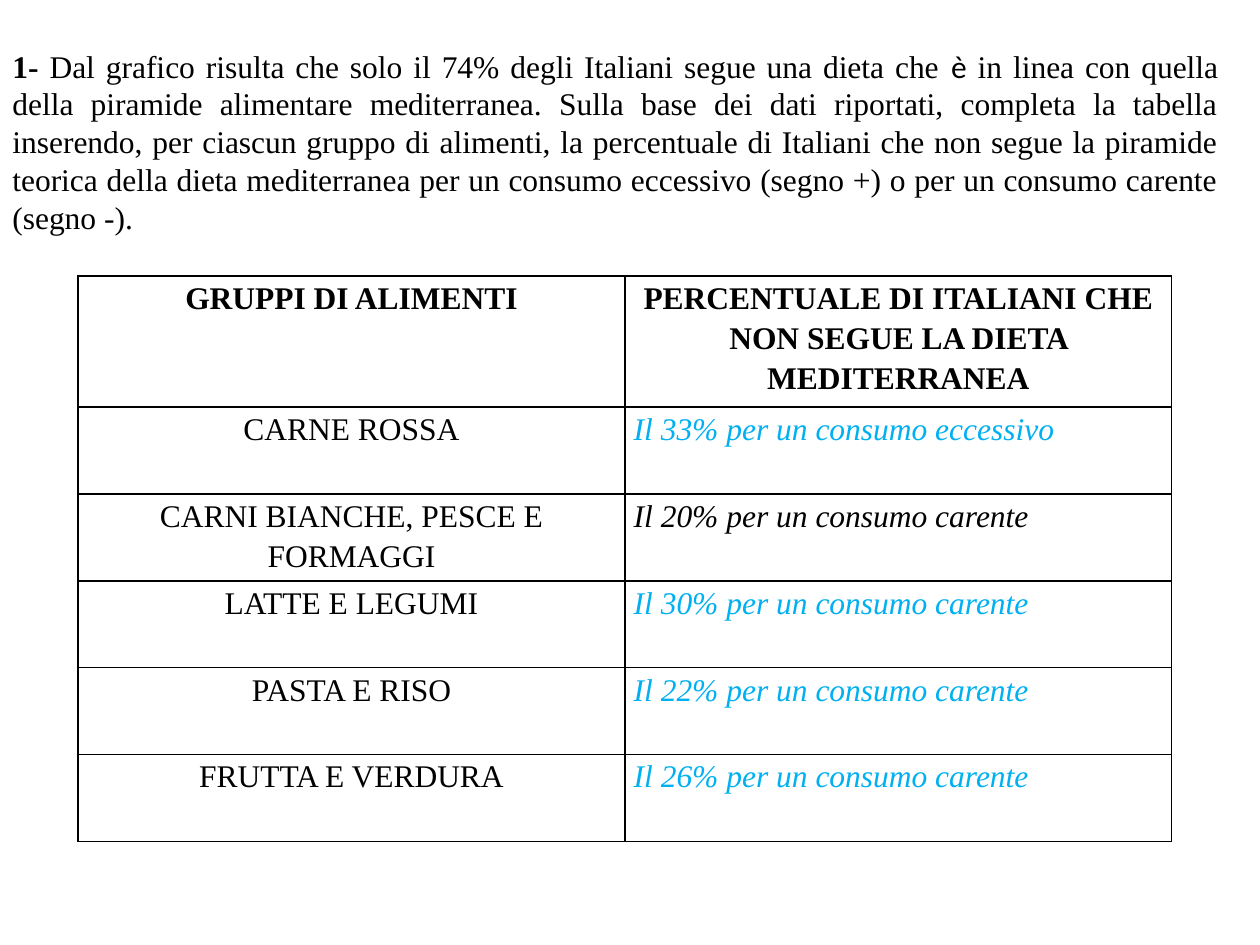
from lxml.etree import SubElement
from pptx import Presentation
from pptx.dml.color import RGBColor
from pptx.enum.text import MSO_ANCHOR, PP_ALIGN
from pptx.oxml.ns import qn
from pptx.util import Inches, Pt

COLORS = {"text": "000000", "answer": "00B0F0", "cell": "FFFFFF", "border": "000000"}
FONT = "Times New Roman"


def set_borders(cell):
    properties = cell._tc.get_or_add_tcPr()
    for position, side in enumerate(("lnL", "lnR", "lnT", "lnB")):
        line = SubElement(properties, qn(f"a:{side}"), w=str(Pt(1)))
        fill = SubElement(line, qn("a:solidFill"))
        SubElement(fill, qn("a:srgbClr"), val=COLORS["border"])
        properties.insert(position, line)  # borders come before the cell fill


def style_font(font, color):
    font.name = FONT
    font.size = Pt(18)
    font.color.rgb = RGBColor.from_string(COLORS[color])


prs = Presentation()
prs.slide_width, prs.slide_height = Inches(10), Inches(7.5)
slide = prs.slides.add_slide(prs.slide_layouts[6])

# Question
question = slide.shapes.add_textbox(Inches(0), Inches(0.31), Inches(9.77), Inches(1.62))
question.text_frame.word_wrap = True
question.text_frame.vertical_anchor = MSO_ANCHOR.MIDDLE
paragraph = question.text_frame.paragraphs[0]
paragraph.alignment = PP_ALIGN.JUSTIFY
question_parts = [
    ("1- ", FONT, True),
    ("Dal grafico risulta che solo il 74% degli Italiani segue una dieta che ", FONT, False),
    ("è", "Calibri", False),
    (" in linea con quella della piramide alimentare mediterranea. Sulla base dei dati "
     "riportati, completa la tabella inserendo, per ciascun gruppo di alimenti, la "
     "percentuale di Italiani che non segue la piramide teorica della dieta mediterranea "
     "per un consumo eccessivo (segno +) o per un consumo carente (segno -).", FONT, False),
]
for text, font_name, bold in question_parts:
    run = paragraph.add_run()
    run.text = text
    style_font(run.font, "text")
    run.font.name = font_name
    run.font.bold = bold

# Food groups and answers: group, answer, answer colour
rows = [
    ("GRUPPI DI ALIMENTI", "PERCENTUALE DI ITALIANI CHE NON SEGUE LA DIETA MEDITERRANEA", "text"),
    ("CARNE ROSSA", "Il 33% per un consumo eccessivo", "answer"),
    ("CARNI BIANCHE, PESCE E FORMAGGI", "Il 20% per un consumo carente", "text"),
    ("LATTE E LEGUMI", "Il 30% per un consumo carente", "answer"),
    ("PASTA E RISO", "Il 22% per un consumo carente", "answer"),
    ("FRUTTA E VERDURA", "Il 26% per un consumo carente", "answer"),
]
table = slide.shapes.add_table(
    len(rows), 2, Inches(0.62), Inches(2.19), Inches(8.68), Inches(4.49)
).table
for column in table.columns:
    column.width = Inches(4.34)

for row_index, (group, answer, answer_color) in enumerate(rows):
    is_header = row_index == 0
    table.rows[row_index].height = Inches(1.04 if is_header else 0.69)
    for column_index, (text, color) in enumerate([(group, "text"), (answer, answer_color)]):
        is_answer = column_index == 1 and not is_header
        cell = table.cell(row_index, column_index)
        cell.margin_left = cell.margin_right = Inches(0.07)
        cell.margin_top = cell.margin_bottom = Inches(0)
        cell.fill.solid()
        cell.fill.fore_color.rgb = RGBColor.from_string(COLORS["cell"])
        set_borders(cell)
        cell.text = text
        paragraph = cell.text_frame.paragraphs[0]
        paragraph.alignment = PP_ALIGN.JUSTIFY if is_answer else PP_ALIGN.CENTER
        paragraph.line_spacing = 1.15
        style_font(paragraph.font, color)
        paragraph.font.bold = is_header
        paragraph.font.italic = is_answer

prs.save("out.pptx")
